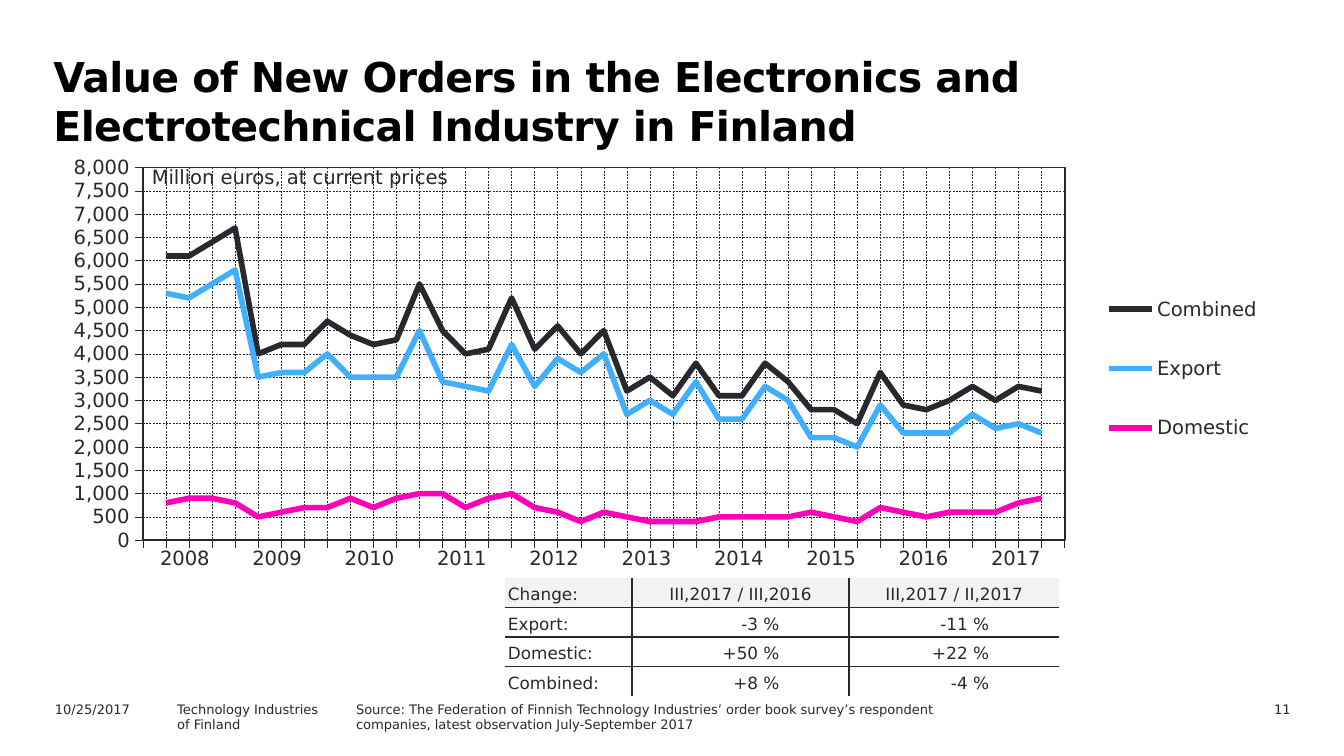
"""Build a slide on new orders in the Finnish electronics and electrotechnical industry."""
from lxml import etree
from pptx import Presentation
from pptx.chart.data import CategoryChartData
from pptx.dml.color import RGBColor
from pptx.enum.chart import XL_CHART_TYPE, XL_LEGEND_POSITION, XL_TICK_LABEL_POSITION, XL_TICK_MARK
from pptx.enum.dml import MSO_LINE
from pptx.enum.text import MSO_ANCHOR, PP_ALIGN
from pptx.oxml import parse_xml
from pptx.oxml.ns import nsdecls, qn
from pptx.util import Cm, Pt

LINE_CHART = XL_CHART_TYPE.LINE
LEGEND_RIGHT = XL_LEGEND_POSITION.RIGHT
NO_LABELS = XL_TICK_LABEL_POSITION.NONE
TICK_OUT = XL_TICK_MARK.OUTSIDE
DASH = MSO_LINE.DASH
BOTTOM = MSO_ANCHOR.BOTTOM
LEFT, CENTER, RIGHT = PP_ALIGN.LEFT, PP_ALIGN.CENTER, PP_ALIGN.RIGHT

BLACK = RGBColor(0x00, 0x00, 0x00)
INK = RGBColor(0x29, 0x28, 0x2E)
BLUE = RGBColor(0x40, 0xAF, 0xFF)
PINK = RGBColor(0xFF, 0x00, 0xB8)
PALE = RGBColor(0xF2, 0xF2, 0xF2)
FONT = "DejaVu Sans"
FOOTER_TOP, FOOTER_HEIGHT = 13.13, 0.46

SERIES = [
    ("Combined", INK, [
        6100, 6100, 6400, 6700, 4000, 4200, 4200, 4700, 4400, 4200, 4300, 5500, 4500,
        4000, 4100, 5200, 4100, 4600, 4000, 4500, 3200, 3500, 3100, 3800, 3100, 3100,
        3800, 3400, 2800, 2800, 2500, 3600, 2900, 2800, 3000, 3300, 3000, 3300, 3200]),
    ("Export", BLUE, [
        5300, 5200, 5500, 5800, 3500, 3600, 3600, 4000, 3500, 3500, 3500, 4500, 3400,
        3300, 3200, 4200, 3300, 3900, 3600, 4000, 2700, 3000, 2700, 3400, 2600, 2600,
        3300, 3000, 2200, 2200, 2000, 2900, 2300, 2300, 2300, 2700, 2400, 2500, 2300]),
    ("Domestic", PINK, [
        800, 900, 900, 800, 500, 600, 700, 700, 900, 700, 900, 1000, 1000,
        700, 900, 1000, 700, 600, 400, 600, 500, 400, 400, 400, 500, 500,
        500, 500, 600, 500, 400, 700, 600, 500, 600, 600, 600, 800, 900]),
]
CHANGES = [
    ("Change:", "III,2017 / III,2016", "III,2017 / II,2017"),
    ("Export:", "-3 %", "-11 %"),
    ("Domestic:", "+50 %", "+22 %"),
    ("Combined:", "+8 %", "-4 %"),
]


def style_font(font, size, color=INK, bold=False):
    """Apply the slide's typeface with a size and colour."""
    font.name, font.size, font.bold = FONT, Pt(size), bold
    font.color.rgb = color


def add_text(s, box, text, size, color=INK, bold=False, align=LEFT, wrap=True):
    """Add a text box with one paragraph per line of text."""
    tf = s.shapes.add_textbox(*map(Cm, box)).text_frame
    tf.word_wrap = wrap
    tf.text = text
    for p in tf.paragraphs:
        p.alignment = align
        for r in p.runs:
            style_font(r.font, size, color, bold)
    return tf


def manual_layout(x, y, w, h, inner=False):
    """Return a manual chart layout in fractions of the chart."""
    target = '<c:layoutTarget val="inner"/>' if inner else ""
    return parse_xml(
        f'<c:layout {nsdecls("c")}><c:manualLayout>{target}'
        '<c:xMode val="edge"/><c:yMode val="edge"/>'
        f'<c:x val="{x}"/><c:y val="{y}"/><c:w val="{w}"/><c:h val="{h}"/>'
        '</c:manualLayout></c:layout>')


def remove_children(parent, tag):
    """Remove every direct child with the given tag."""
    for child in parent.findall(qn(tag)):
        parent.remove(child)


def style_axis(axis):
    """Give an axis outside ticks, a thin line and a dashed grid."""
    axis.major_tick_mark = TICK_OUT
    axis.has_major_gridlines = True
    axis.format.line.color.rgb = INK
    axis.format.line.width = Pt(0.22)
    grid = axis.major_gridlines.format.line
    grid.color.rgb, grid.width, grid.dash_style = INK, Pt(0.25), DASH


def style_plot_area(chart):
    """Place and frame the plot, and start the lines on the tick marks."""
    area = chart._chartSpace.chart.plotArea
    remove_children(area, "c:layout")
    area.insert(0, manual_layout(0.082, 0.041, 0.747, 0.833, inner=True))
    area.append(parse_xml(
        f'<c:spPr {nsdecls("c", "a")}><a:noFill/><a:ln w="12700"><a:solidFill>'
        f'<a:srgbClr val="{INK}"/></a:solidFill></a:ln></c:spPr>'))
    value_axis = area.find(qn("c:valAx"))
    remove_children(value_axis, "c:crossBetween")
    value_axis.find(qn("c:crosses")).addnext(
        parse_xml(f'<c:crossBetween {nsdecls("c")} val="midCat"/>'))


def add_orders_chart(s):
    """Add the quarterly line chart of new orders."""
    data = CategoryChartData(number_format="#,##0")
    data.categories = [str(i + 1) for i in range(len(SERIES[0][2]) + 2)]
    for name, _, values in SERIES:
        data.add_series(name, [None, *values, None])
    chart = s.shapes.add_chart(
        LINE_CHART, Cm(0.79), Cm(2.82), Cm(23.32), Cm(8.46), data).chart
    chart.has_title = False
    style_font(chart.font, 10.5)
    for series, (_, color, _) in zip(chart.plots[0].series, SERIES):
        series.smooth = False
        series.format.line.color.rgb = color
        series.format.line.width = Pt(3)
    chart.plots[0].vary_by_categories = False

    style_axis(chart.category_axis)
    chart.category_axis.tick_label_position = NO_LABELS
    axis = chart.value_axis
    style_axis(axis)
    axis.minimum_scale, axis.maximum_scale, axis.major_unit = 0, 8000, 500
    axis.tick_labels.number_format = "#,##0"
    axis.tick_labels.number_format_is_linked = False
    style_font(axis.tick_labels.font, 10.5)
    style_plot_area(chart)

    chart.has_legend = True
    legend = chart.legend
    legend.position = LEGEND_RIGHT
    legend.include_in_layout = False
    style_font(legend.font, 10.5)
    remove_children(legend._element, "c:layout")
    legend._element.find(qn("c:legendPos")).addnext(manual_layout(0.85, 0.25, 0.15, 0.48))


def set_borders(cell, sides=""):
    """Draw the named sides (L, R, T, B) of a cell and hide the others."""
    tc_pr = cell._tc.get_or_add_tcPr()
    for i, side in enumerate("LRTB"):
        ln = etree.Element(qn(f"a:ln{side}"), w="12700")
        if side in sides:
            fill = etree.SubElement(ln, qn("a:solidFill"))
            etree.SubElement(fill, qn("a:srgbClr"), val=str(INK))
        else:
            etree.SubElement(ln, qn("a:noFill"))
        tc_pr.insert(i, ln)


def add_plain_table(s, left, top, widths, row_height, rows):
    """Add a table without a banded style and return it."""
    table = s.shapes.add_table(len(rows), len(widths), Cm(left), Cm(top),
                               Cm(sum(widths)), Cm(row_height * len(rows))).table
    table.first_row = table.horz_banding = False
    for column, width in zip(table.columns, widths):
        column.width = Cm(width)
    for row in table.rows:
        row.height = Cm(row_height)
    return table


def fill_cell(cell, text, size, align, sides=""):
    """Set the text, alignment and borders of an unfilled cell."""
    cell.text = text
    p = cell.text_frame.paragraphs[0]
    p.alignment = align
    style_font(p.runs[0].font, size)
    cell.fill.background()
    set_borders(cell, sides)


def add_year_table(s):
    """Add the row of years below the chart."""
    years = [str(year) for year in range(2008, 2018)]
    table = add_plain_table(s, 2.62, 10.21, [1.745] * len(years), 0.79, [years])
    for cell, year in zip(table.iter_cells(), years):
        fill_cell(cell, year, 10.5, CENTER)


def add_change_table(s):
    """Add the table of changes with inner rules only."""
    table = add_plain_table(s, 9.55, 10.92, [2.39, 4.11, 3.96], 0.56, CHANGES)
    for i, row in enumerate(CHANGES):
        for j, text in enumerate(row):
            cell = table.cell(i, j)
            sides = ("L" * (j > 0) + "R" * (j < len(row) - 1)
                     + "T" * (i > 0) + "B" * (i < len(CHANGES) - 1))
            align = LEFT if j == 0 else CENTER if i == 0 else RIGHT
            fill_cell(cell, text, 9, align, sides)
            cell.vertical_anchor = BOTTOM
            cell.margin_left = cell.margin_top = cell.margin_bottom = Cm(0.05)
            cell.margin_right = Cm(1.32 if align == RIGHT else 0.05)
            if i == 0:
                cell.fill.solid()
                cell.fill.fore_color.rgb = PALE


def add_footer(s):
    """Add the date, organisation, source and page number."""
    for left, width, text, align in [
        (0.79, 2.54, "10/25/2017", LEFT),
        (3.1, 4.57, "Technology Industries\nof Finland", LEFT),
        (6.48, 12.75, "Source: The Federation of Finnish Technology Industries’ order book survey’s "
                      "respondent companies, latest observation July-September 2017", LEFT),
        (22.25, 2.39, "11", RIGHT),
    ]:
        add_text(s, (left, FOOTER_TOP, width, FOOTER_HEIGHT), text, 7, align=align)


def main():
    """Build and save the slide."""
    prs = Presentation()
    prs.slide_width, prs.slide_height = Cm(25.4), Cm(14.29)
    s = prs.slides.add_slide(prs.slide_layouts[6])
    title = add_text(s, (0.76, 0.84, 22.2, 1.8),
                     "Value of New Orders in the Electronics and "
                     "Electrotechnical Industry in Finland", 22, BLACK, bold=True)
    title.paragraphs[0].runs[0].font._element.set("spc", "-30")
    add_orders_chart(s)
    add_year_table(s)
    add_text(s, (2.62, 3, 6.2, 0.69), "Million euros, at current prices", 10.5, wrap=False)
    add_change_table(s)
    add_footer(s)
    prs.save("out.pptx")


if __name__ == "__main__":
    main()
